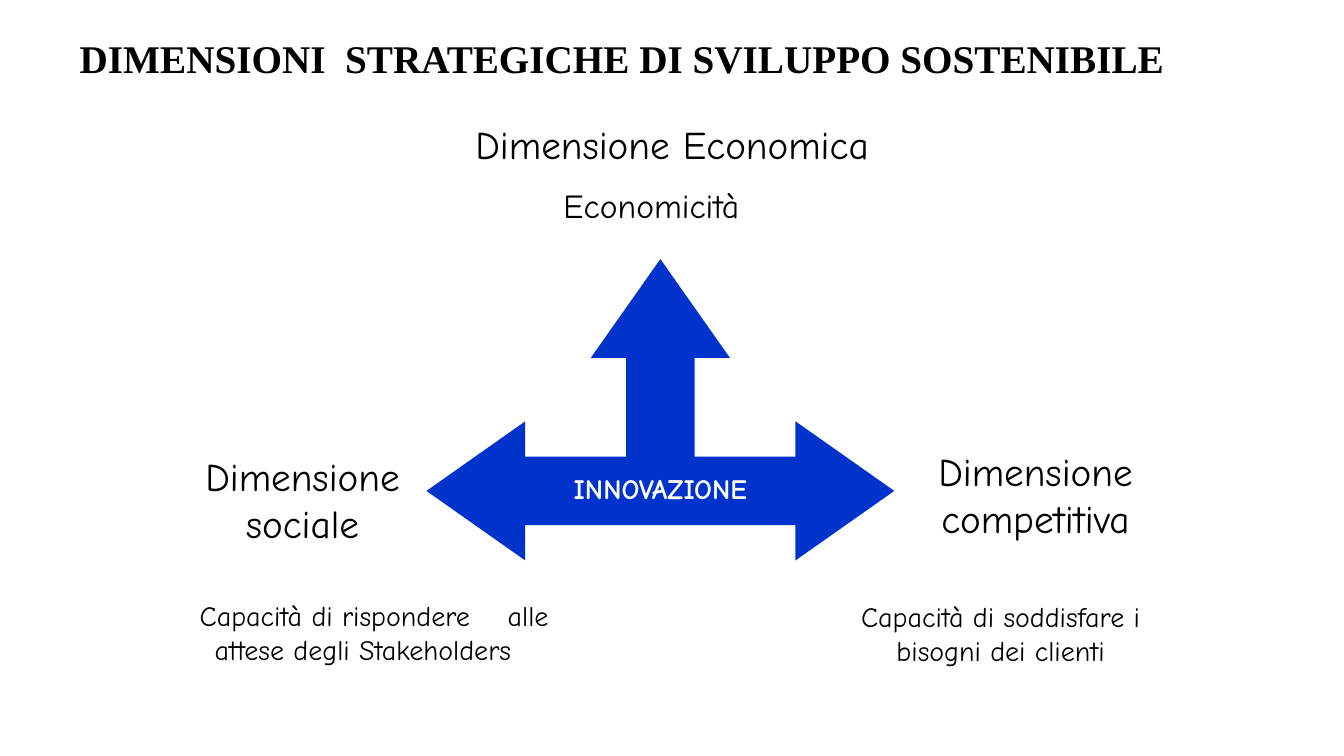
from pptx import Presentation
from pptx import util as u
from pptx.dml.color import RGBColor
from pptx.enum import shapes, text as t

WIDTH, HEIGHT = 13.33, 7.5
COLORS = {"ink": "000000", "arrow": "0033CC", "on_arrow": "FFFFFF", "frame": "FFFFFF"}
BODY_FONT, TITLE_FONT = "Comic Neue", "Times New Roman"


def write(shape, wording, size=28, font=BODY_FONT, color="ink", bold=False,
          align=t.PP_ALIGN.CENTER, wrap=True):
    frame = shape.text_frame
    frame.word_wrap = wrap
    frame.auto_size = t.MSO_AUTO_SIZE.NONE
    frame.vertical_anchor = t.MSO_ANCHOR.TOP
    paragraph = frame.paragraphs[0]
    paragraph.alignment = align
    for part in [wording] if isinstance(wording, str) else wording:
        run = paragraph.add_run()
        run.text = part
        run.font.size = u.Pt(size)
        run.font.name = font
        run.font.bold = bold
        run.font.color.rgb = RGBColor.from_string(COLORS[color])
    return paragraph


def add_label(slide, box, wording, **style):
    shape = slide.shapes.add_textbox(*map(u.Inches, box))
    return write(shape, wording, **style)


def add_title(slide, box, wording):
    title = slide.shapes.title
    title.left, title.top, title.width, title.height = map(u.Inches, box)
    write(title, wording, font=TITLE_FONT, bold=True, align=t.PP_ALIGN.LEFT)


def add_three_way_arrow(slide, box, wording):
    """Draw arms to the left, right and top that meet on one axis."""
    left, top, width, height = box
    head_half, shaft_half, head_length = 0.69, 0.34, 0.98
    middle, axis = left + width / 2, top + height - head_half
    arm = width / 2
    right_half = [
        (head_half, top + head_length),
        (shaft_half, top + head_length),
        (shaft_half, axis - shaft_half),
        (arm - head_length, axis - shaft_half),
        (arm - head_length, axis - head_half),
        (arm, axis),
        (arm - head_length, axis + head_half),
        (arm - head_length, axis + shaft_half),
    ]
    points = [(middle + dx, y) for dx, y in right_half]
    points += [(middle - dx, y) for dx, y in reversed(right_half)]
    builder = slide.shapes.build_freeform(u.Inches(middle), u.Inches(top))
    builder.add_line_segments([(u.Inches(x), u.Inches(y)) for x, y in points], close=True)
    arrow = builder.convert_to_shape()
    arrow.shadow.inherit = False
    arrow.fill.solid()
    arrow.fill.fore_color.rgb = RGBColor.from_string(COLORS["arrow"])
    arrow.line.fill.background()
    add_label(slide, (middle - 1.78, axis - 0.24, 3.56, 0.43), wording,
              size=20, color="on_arrow", bold=True)


def add_economic_dimension(slide, box):
    left, top, width, height = box
    heading = slide.shapes.add_shape(
        shapes.MSO_SHAPE.RECTANGLE, *map(u.Inches, (left, top, width, 0.58)))
    heading.shadow.inherit = False
    heading.fill.background()
    heading.line.color.rgb = RGBColor.from_string(COLORS["frame"])
    heading.line.width = u.Pt(0.75)
    write(heading, "Dimensione Economica")
    add_label(slide, (left + 1.03, top + 0.65, 2.05, 0.5), "Economicità",
              size=24, align=t.PP_ALIGN.LEFT, wrap=False)


def add_side_dimension(slide, heading_box, heading, detail_box, detail):
    add_label(slide, heading_box, heading)
    return add_label(slide, detail_box, detail, size=20)


def build_slide(presentation):
    slide = presentation.slides.add_slide(presentation.slide_layouts[5])
    add_title(slide, (0.69, 0.29, 12.29, 0.57),
              "DIMENSIONI  STRATEGICHE DI SVILUPPO SOSTENIBILE")
    add_economic_dimension(slide, (4.46, 1.14, 4.41, 1.15))
    add_three_way_arrow(slide, (4.23, 2.57, 4.64, 2.99), "INNOVAZIONE")
    add_side_dimension(slide, (9.03, 4.39, 2.48, 1.03), "Dimensione competitiva",
                       (8.18, 5.9, 3.49, 0.77),
                       "Capacità di soddisfare i bisogni dei clienti")
    social = add_side_dimension(
        slide, (1.86, 4.44, 2.28, 1.03), "Dimensione sociale",
        (1.56, 5.89, 4.08, 0.77),
        ["Capacità di rispondere", " ", "alle attese degli Stakeholders"])
    # The first line is indented, and one space in it is widened.
    social._p.get_or_add_pPr().set("indent", str(u.Inches(0.22)))
    social.runs[1].font._element.set("spc", "2000")


def main():
    presentation = Presentation()
    presentation.slide_width = u.Inches(WIDTH)
    presentation.slide_height = u.Inches(HEIGHT)
    build_slide(presentation)
    presentation.save("out.pptx")


if __name__ == "__main__":
    main()
